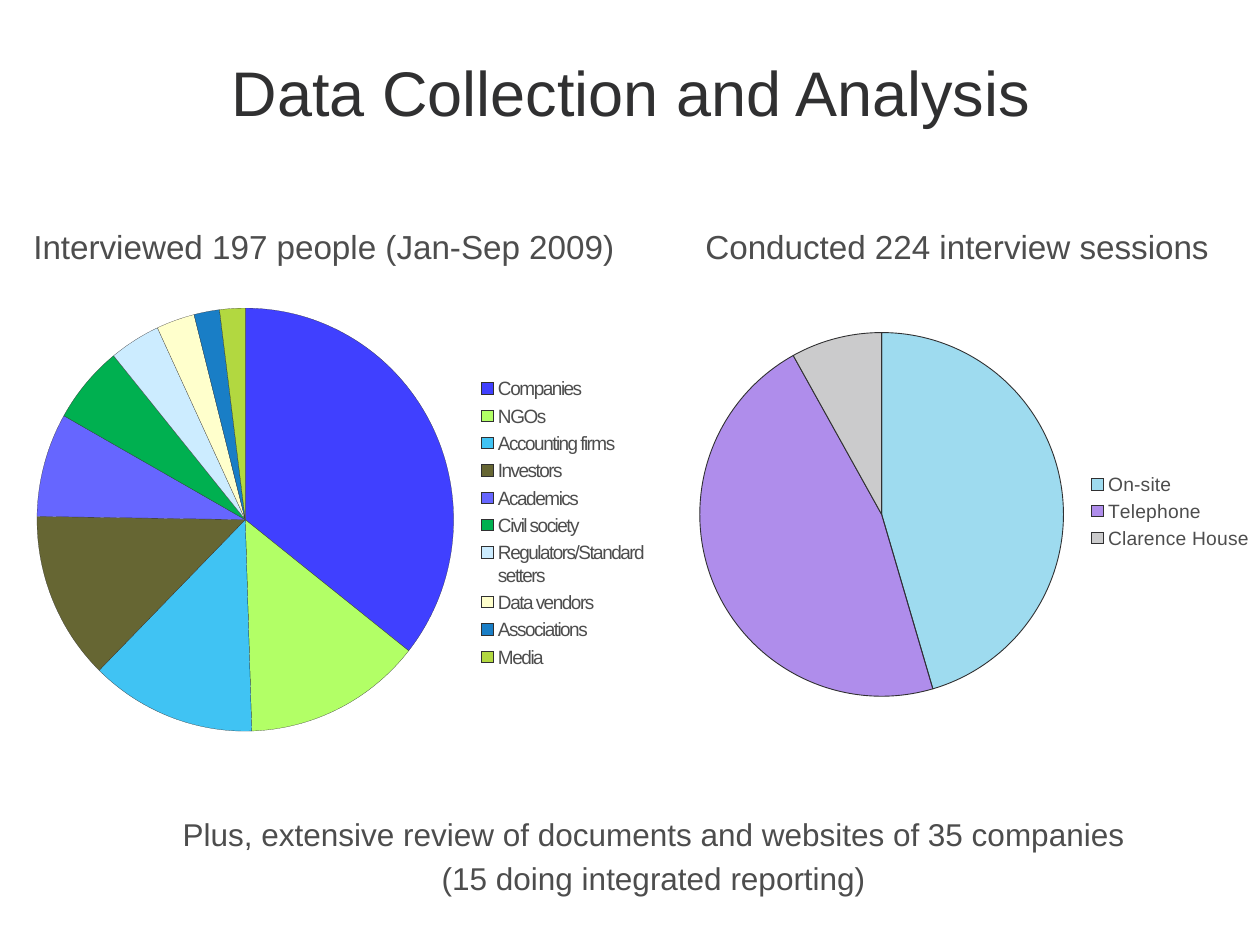
import pptx
import pptx.util
import pptx.dml.color
import pptx.chart.data
import pptx.enum.chart
import pptx.enum.text
import pptx.oxml
import pptx.oxml.ns
import lxml.etree

Pt = pptx.util.Pt
qn = pptx.oxml.ns.qn
GREY, DARK = "4D4D4D", "303031"


def color(code):
    return pptx.dml.color.RGBColor.from_string(code)


def add_text(box, lines, size, code, wrap=True):
    """Add a text box with one paragraph for each line."""
    frame = slide.shapes.add_textbox(*[Pt(v) for v in box]).text_frame
    frame.word_wrap = wrap
    frame.text = "\n".join(lines)
    for par in frame.paragraphs:
        par.font.name, par.font.size = "Arial", Pt(size)
        par.font.color.rgb = color(code)
    return frame


deck = pptx.Presentation()
deck.slide_width, deck.slide_height = Pt(720), Pt(540)
slide = deck.slides.add_slide(deck.slide_layouts[6])
center = pptx.enum.text.PP_ALIGN.CENTER

# Title
title = add_text((77, 32, 567, 40), ["Data Collection and Analysis"], 36, DARK)
title.vertical_anchor = pptx.enum.text.MSO_ANCHOR.MIDDLE
title.paragraphs[0].alignment = center

# Closing note
note = add_text((54, 462, 612, 54),
                ["Plus, extensive review of documents and websites of 35 companies",
                 "(15 doing integrated reporting)"], 18, GREY)
for par in note.paragraphs:
    par.alignment = center
    par._p.get_or_add_pPr().set("marL", str(Pt(27)))
note.paragraphs[1].space_before = Pt(4)

# Pies: box, line width, letter spacing, plot and legend areas as
# fractions of the box, then label, value, color, opacity in percent
pies = [
    ((12, 114, 372, 366), 0.1, -100,
     (0.025, 0.165, 0.65, 0.67), (0.7, 0.27, 0.29, 0.47),
     [("Companies", 36, "0000FF", 75),
      ("NGOs", 14, "99FF33", 75),
      ("Accounting firms", 13, "00B0F0", 75),
      ("Investors", 13, "666633", 100),
      ("Academics", 8, "6666FF", 100),
      ("Civil society", 6, "00B050", 100),
      ("Regulators/Standard setters", 4, "CCECFF", 100),
      ("Data vendors", 3, "FFFFCC", 100),
      ("Associations", 2, "0070C0", 90),
      ("Media", 2, "99CC00", 75)]),
    ((390, 108, 330, 372), 0.5, 0,
     (0.03, 0.22, 0.63, 0.56), (0.69, 0.43, 0.31, 0.13),
     [("On-site", 45, "28B1DC", 45),
      ("Telephone", 46, "6929DB", 53),
      ("Clarence House", 8, "CBCBCC", 100)]),
]
for box, width, gap, plot, key, parts in pies:
    data = pptx.chart.data.CategoryChartData()
    data.categories = [part[0] for part in parts]
    data.add_series("Series 1", [part[1] for part in parts])
    chart = slide.shapes.add_chart(pptx.enum.chart.XL_CHART_TYPE.PIE,
                                   *[Pt(v) for v in box], data).chart
    chart.has_title = False
    chart.font.name, chart.font.size = "Arial", Pt(18)
    chart.font.color.rgb = color(GREY)

    # Legend
    chart.has_legend = True
    legend = chart.legend
    legend.position = pptx.enum.chart.XL_LEGEND_POSITION.RIGHT
    legend.include_in_layout = False
    legend.font.name, legend.font.size = "Arial", Pt(11)
    legend.font.color.rgb = color(GREY)
    legend._element.find(".//" + qn("a:defRPr")).set("spc", str(gap))

    # Slices
    pie = chart.plots[0]
    pie.vary_by_categories = True
    for i, (label, value, code, alpha) in enumerate(parts):
        form = pie.series[0].points[i].format
        form.fill.solid()
        form.fill.fore_color.rgb = color(code)
        form.line.color.rgb = color(DARK)
        form.line.width = Pt(width)
        if alpha < 100:
            tint = form.fill._xPr.find(".//" + qn("a:srgbClr"))
            lxml.etree.SubElement(tint, qn("a:alpha")).set("val", str(alpha * 1000))

    # Fixed places of plot and legend
    area = chart._chartSpace.chart.plotArea
    for host, spot in ((area, plot), (legend._element, key)):
        for old in host.findall(qn("c:layout")):
            host.remove(old)
        layout = pptx.oxml.parse_xml(
            '<c:layout xmlns:c="%s"><c:manualLayout/></c:layout>'
            % pptx.oxml.ns.nsuri("c"))
        rules = [("xMode", "edge"), ("yMode", "edge"), *zip("xywh", spot)]
        if host is area:
            rules.insert(0, ("layoutTarget", "inner"))
        for name, val in rules:
            lxml.etree.SubElement(layout[0], qn("c:" + name)).set("val", str(val))
        host.insert(0 if host is area else 1, layout)

# Headings above the pies
for left, width, text in ((396, 307, "Conducted 224 interview sessions"),
                          (12, 352, "Interviewed 197 people (Jan-Sep 2009)")):
    add_text((left, 126, width, 30), [text], 19, GREY, wrap=False)

deck.save("out.pptx")
